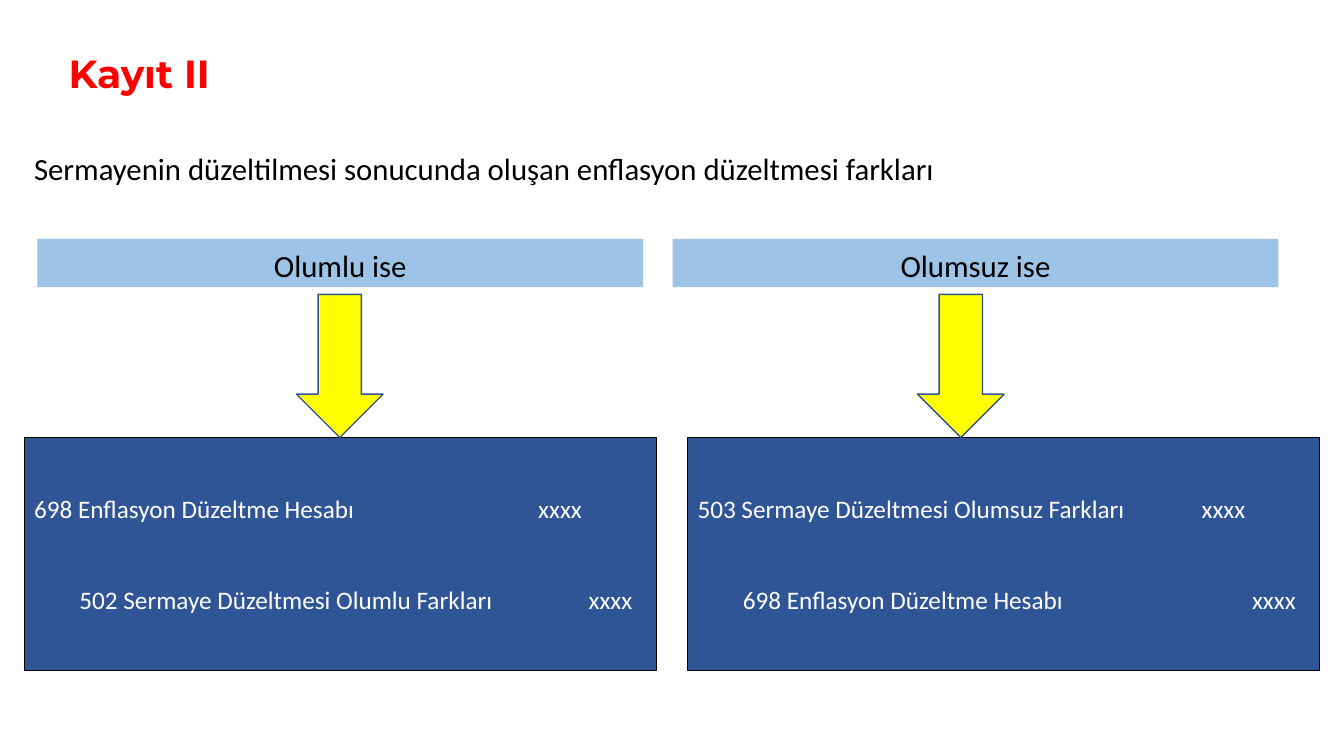
from lxml import etree
from pptx import Presentation
from pptx.dml.color import RGBColor
from pptx.enum import shapes, text
from pptx.oxml import ns
from pptx.util import Inches, Pt

RED = RGBColor(0xFF, 0x00, 0x00)
BLACK = RGBColor(0x00, 0x00, 0x00)
WHITE = RGBColor(0xFF, 0xFF, 0xFF)
NAVY = RGBColor(0x2F, 0x55, 0x97)
SKY = RGBColor(0x9D, 0xC3, 0xE6)
YELLOW = RGBColor(0xFF, 0xFF, 0x00)
EDGE = RGBColor(0x32, 0x54, 0x91)

KIND = shapes.MSO_SHAPE
TOP, BAR, WIDE = 2.37, 0.48, 6.01  # header bar
DROP, TIP = 0.55, 0.86             # arrow offset from bar top, arrow width
BODY, TALL, SPAN = 4.34, 2.31, 6.27  # entry box

# Each side: header, header left, arrow left, box left, debit, credit
SIDES = [
    ("Olumlu ise", 0.37, 2.94, 0.24,
     "698 Enflasyon Düzeltme Hesabı", "502 Sermaye Düzeltmesi Olumlu Farkları"),
    ("Olumsuz ise", 6.67, 9.1, 6.82,
     "503 Sermaye Düzeltmesi Olumsuz Farkları", "698 Enflasyon Düzeltme Hesabı"),
]


def style(para, size, color, font="Calibri", bold=False):
    for run in para.runs:
        run.font.size = Pt(size)
        run.font.name = font
        run.font.bold = bold
        run.font.color.rgb = color


def label(slide, box, words, size, color, inset=True, **look):
    frame = slide.shapes.add_textbox(*map(Inches, box)).text_frame
    frame.word_wrap = True
    if not inset:
        frame.margin_left = frame.margin_right = 0
        frame.margin_top = frame.margin_bottom = 0
    frame.text = words
    style(frame.paragraphs[0], size, color, **look)


def block(slide, kind, box, fill, edge=None, width=1):
    shape = slide.shapes.add_shape(kind, *map(Inches, box))
    shape.shadow.inherit = False
    shape.fill.solid()
    shape.fill.fore_color.rgb = fill
    if edge is None:
        shape.line.fill.background()
    else:
        shape.line.color.rgb = edge
        shape.line.width = Pt(width)
    return shape


def header(slide, box, words):
    frame = block(slide, KIND.RECTANGLE, box, SKY).text_frame
    frame.word_wrap = True
    frame.vertical_anchor = text.MSO_ANCHOR.TOP
    frame.text = words
    para = frame.paragraphs[0]
    para.alignment = text.PP_ALIGN.CENTER
    para.line_spacing = 1.07
    para.space_after = Pt(8)
    style(para, 22, BLACK)


def set_tabs(para, stops):
    tabs = etree.SubElement(para._p.get_or_add_pPr(), ns.qn("a:tabLst"))
    for stop in stops:
        etree.SubElement(tabs, ns.qn("a:tab"), pos=str(Inches(stop)), algn="l")


def entry(slide, box, debit, credit):
    frame = block(slide, KIND.RECTANGLE, box, NAVY, BLACK, 0.75).text_frame
    frame.word_wrap = True
    frame.vertical_anchor = text.MSO_ANCHOR.MIDDLE
    frame.text = f"{debit}\txxxx\n\t{credit}\txxxx"
    first, second = frame.paragraphs
    second.space_before = Pt(43)
    for para, stops in ((first, [5]), (second, [0.45, 5.5])):
        para.alignment = text.PP_ALIGN.LEFT
        set_tabs(para, stops)
        style(para, 18, WHITE)


def main():
    deck = Presentation()
    deck.slide_width, deck.slide_height = Inches(13.33), Inches(7.5)
    slide = deck.slides.add_slide(deck.slide_layouts[6])

    # Title and lead sentence
    label(slide, (0.68, 0.49, 2.82, 0.61), "Kayıt II", 28, RED,
          inset=False, font="Montserrat", bold=True)
    label(slide, (0.24, 1.44, 10.8, 0.47),
          "Sermayenin düzeltilmesi sonucunda oluşan enflasyon düzeltmesi farkları",
          22, BLACK)

    # Two cases: header, journal entry, arrow between them
    for words, left, arrow, edge, debit, credit in SIDES:
        header(slide, (left, TOP, WIDE, BAR), words)
        entry(slide, (edge, BODY, SPAN, TALL), debit, credit)
        start = TOP + DROP
        block(slide, KIND.DOWN_ARROW, (arrow, start, TIP, BODY - start),
              YELLOW, EDGE)

    deck.save("out.pptx")


if __name__ == "__main__":
    main()
